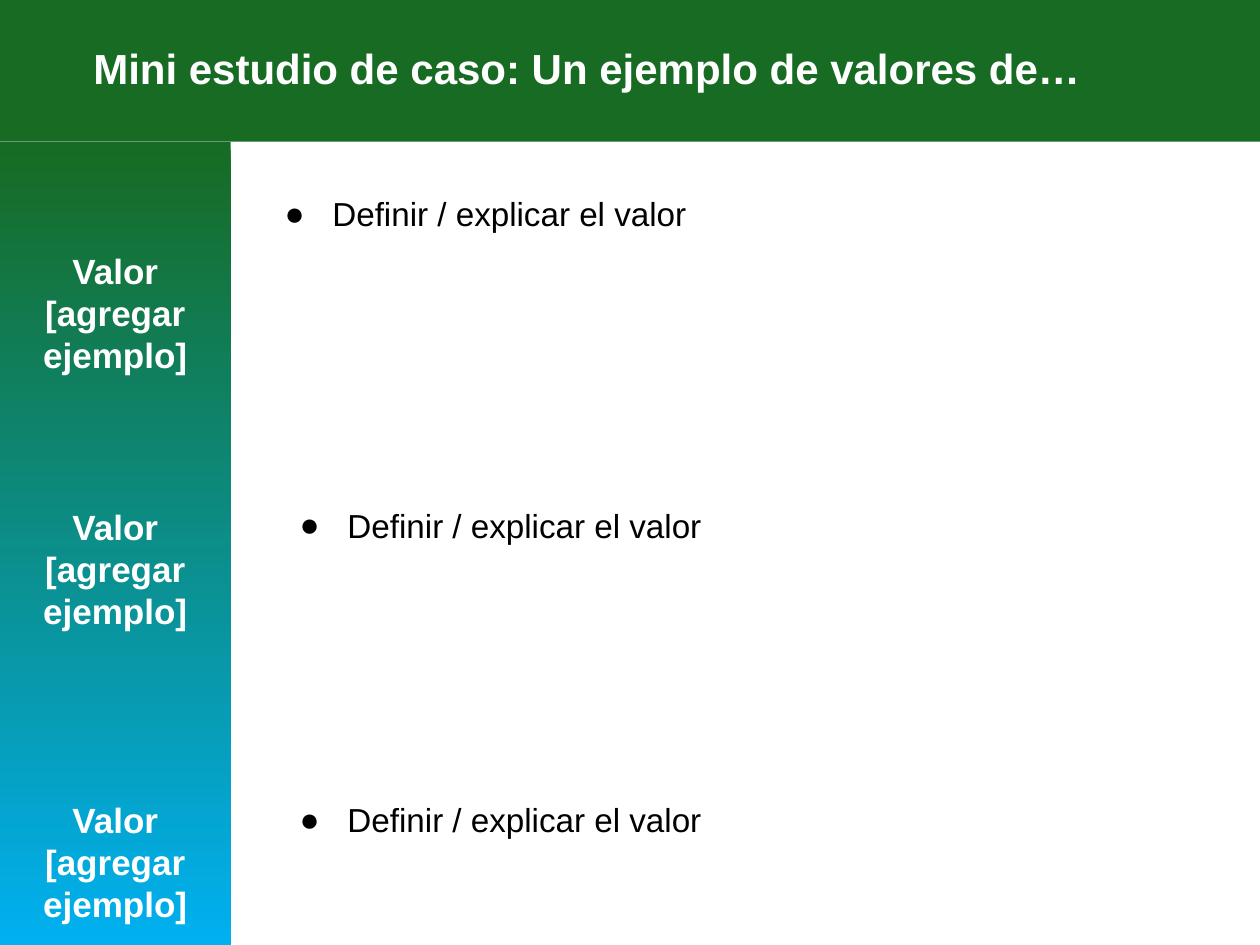
from dataclasses import dataclass

from lxml.etree import SubElement
from pptx import Presentation
from pptx.dml.color import RGBColor
from pptx.enum.shapes import MSO_SHAPE as Shape
from pptx.enum.text import MSO_ANCHOR as Anchor, PP_ALIGN as Align
from pptx.oxml.ns import qn
from pptx.util import Inches, Pt

TITLE = "Mini estudio de caso: Un ejemplo de valores de…"
# label, its top and height, explanation, its left, top and width (inches)
VALUES = [
    ("Valor [agregar ejemplo]", 1.88, 0.79, "Definir / explicar el valor", 2.04, 1.39, 5.06),
    ("Valor [agregar ejemplo]", 3.91, 0.79, "Definir / explicar el valor", 2.16, 3.86, 4.83),
    ("Valor [agregar ejemplo]", 6.24, 0.51, "Definir / explicar el valor", 2.16, 6.2, 4.83),
]


@dataclass(frozen=True)
class Theme:
    font: str = "Arial"
    green: str = "176B22"
    blue: str = "00B0F0"
    light: str = "FFFFFF"
    dark: str = "000000"
    title: int = 24
    label: int = 20
    body: int = 19


T = Theme()
W, H = 10, 7.5
HEADER_H = 0.15 * H
SIDEBAR_W = 1.83
TITLE_W, TITLE_H = 8.62, 0.9
BODY_H = 0.9
INDENT, HANGING = 0.5, 0.38


def add_panel(shapes, kind, *box):
    sp = shapes.add_shape(kind, *map(Inches, box))
    sp.shadow.inherit = False
    sp.line.fill.background()
    return sp


def add_text(shapes, box, text, size, color, bold=False, inset=0.1,
             align=Align.LEFT, anchor=Anchor.TOP, spacing=1.0, bullet=None):
    tf = shapes.add_textbox(*map(Inches, box)).text_frame
    tf.word_wrap = True
    tf.vertical_anchor = anchor
    tf.margin_left = tf.margin_right = tf.margin_top = tf.margin_bottom = Inches(inset)
    p = tf.paragraphs[0]
    p.alignment, p.line_spacing = align, spacing
    if bullet:
        add_bullet(p, bullet, color)
    r = p.add_run()
    r.text = text
    r.font.name, r.font.size, r.font.bold = T.font, Pt(size), bold
    r.font.color.rgb = RGBColor.from_string(color)


def add_bullet(p, char, color):
    pPr = p._p.get_or_add_pPr()
    pPr.set("marL", str(Inches(INDENT)))
    pPr.set("indent", str(-Inches(HANGING)))
    SubElement(SubElement(pPr, qn("a:buClr")), qn("a:srgbClr"), val=color)
    SubElement(pPr, qn("a:buFont"), typeface=T.font)
    SubElement(pPr, qn("a:buChar"), char=char)


def main():
    prs = Presentation()
    prs.slide_width, prs.slide_height = Inches(W), Inches(H)
    shapes = prs.slides.add_slide(prs.slide_layouts[6]).shapes

    header = add_panel(shapes, Shape.RECTANGLE, 0, 0, W, HEADER_H)
    header.fill.solid()
    header.fill.fore_color.rgb = RGBColor.from_string(T.green)
    title_box = ((W - TITLE_W) / 2, (HEADER_H - TITLE_H) / 2, TITLE_W, TITLE_H)
    add_text(shapes, title_box, TITLE, T.title, T.light, bold=True, inset=0.05,
             anchor=Anchor.MIDDLE, spacing=0.9)

    sidebar = shapes.add_group_shape().shapes
    panel = add_panel(sidebar, Shape.FLOWCHART_PROCESS, 0, HEADER_H, SIDEBAR_W, H - HEADER_H)
    panel.fill.gradient()
    panel.fill.gradient_angle = 270
    for stop, color in zip(panel.fill.gradient_stops, (T.green, T.blue)):
        stop.color.rgb = RGBColor.from_string(color)

    for label, label_top, label_h, body, left, top, width in VALUES:
        add_text(sidebar, (0, label_top, SIDEBAR_W, label_h), label, T.label, T.light,
                 bold=True, align=Align.CENTER)
        add_text(shapes, (left, top, width, BODY_H), body, T.body, T.dark,
                 spacing=1.15, bullet="●")

    prs.save("out.pptx")


if __name__ == "__main__":
    main()
